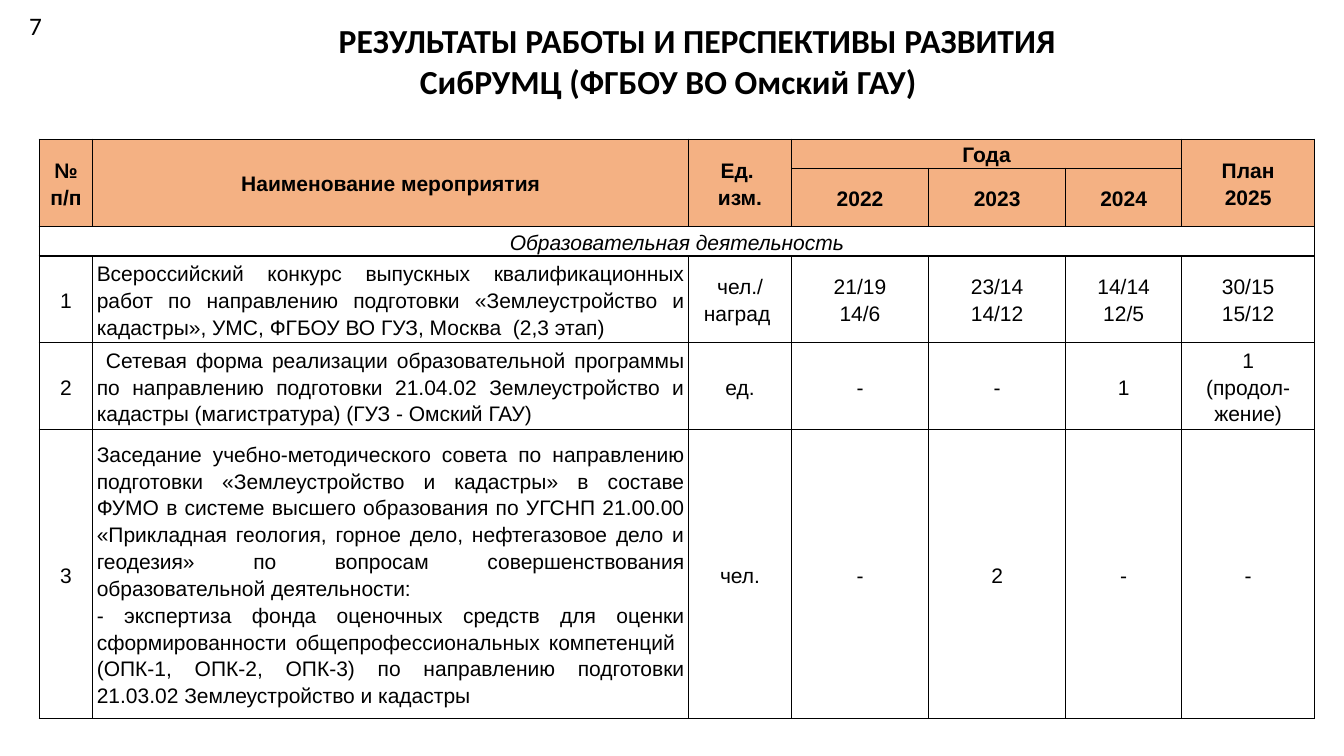
from dataclasses import dataclass
from typing import Any

import pptx
import pptx.dml.color
import pptx.enum.text
import pptx.oxml
import pptx.oxml.ns
import pptx.util
from pptx.util import Inches

ALIGN = pptx.enum.text.PP_ALIGN
ANCHOR = pptx.enum.text.MSO_ANCHOR
COLORS = {"text": "000000", "border": "000000", "header": "F4B183"}

TITLE_FONT = {"name": "Calibri", "size": pptx.util.Pt(24), "bold": True}
NUMBER_FONT = {"name": "Calibri", "size": pptx.util.Pt(18)}
CELL_FONT = {"name": "Arial", "size": pptx.util.Pt(15), "bold": False, "italic": False}
HEADER_FONT = CELL_FONT | {"bold": True}
SECTION_FONT = CELL_FONT | {"italic": True}
CELL_FORMAT = {
    "margin_left": Inches(0.04),
    "margin_right": Inches(0.04),
    "margin_top": 0,
    "margin_bottom": 0,
    "vertical_anchor": ANCHOR.MIDDLE,
}

COLUMN_WIDTHS = [0.53, 5.91, 1.02, 1.36, 1.36, 1.15, 1.32]
ROW_HEIGHTS = [0.29, 0.58, 0.29, 0.86, 0.86, 2.87]
NAME_COLUMN = 1
HEADER_ROWS = 2


@dataclass
class TableCell:
    row: int
    col: int
    text: str
    rows: int = 1
    cols: int = 1


HEADER = [
    TableCell(0, 0, "№\nп/п", rows=2),
    TableCell(0, 1, "Наименование мероприятия", rows=2),
    TableCell(0, 2, "Ед. \nизм.", rows=2),
    TableCell(0, 3, "Года", cols=3),
    TableCell(0, 6, "План\n2025", rows=2),
    TableCell(1, 3, "2022"),
    TableCell(1, 4, "2023"),
    TableCell(1, 5, "2024"),
]
SECTION = TableCell(2, 0, "Образовательная деятельность", cols=7)
ACTIVITIES = [
    [
        "1",
        "Всероссийский конкурс выпускных квалификационных работ по направлению "
        "подготовки «Землеустройство и кадастры», УМС, ФГБОУ ВО ГУЗ, Москва  (2,3 этап)",
        "чел./\nнаград ", "21/19\n14/6", "23/14\n14/12", "14/14\n12/5", "30/15\n15/12",
    ],
    [
        "2",
        " Сетевая форма реализации образовательной программы по направлению подготовки "
        "21.04.02 Землеустройство и кадастры (магистратура) (ГУЗ - Омский ГАУ)",
        "ед.", "-", "-", "1", "1\n(продол-жение)",
    ],
    [
        "3",
        "Заседание учебно-методического совета по направлению подготовки "
        "«Землеустройство и кадастры» в составе ФУМО в системе высшего образования "
        "по УГСНП 21.00.00 «Прикладная геология, горное дело, нефтегазовое дело и "
        "геодезия» по вопросам совершенствования образовательной деятельности:\n"
        "- экспертиза фонда оценочных средств для оценки сформированности "
        "общепрофессиональных компетенций \v(ОПК-1, ОПК-2, ОПК-3) по направлению "
        "подготовки 21.03.02 Землеустройство и кадастры",
        "чел.", "-", "2", "-", "-",
    ],
]


def apply_format(obj: Any, values: dict[str, Any]) -> None:
    for name, value in values.items():
        setattr(obj, name, value)


def rgb(name: str) -> pptx.dml.color.RGBColor:
    return pptx.dml.color.RGBColor.from_string(COLORS[name])


def write_text(tf: Any, text: str, font: dict[str, Any], paragraph: dict[str, Any]) -> None:
    """Newlines start paragraphs; vertical tabs break lines."""
    tf.text = text
    for p in tf.paragraphs:
        apply_format(p, paragraph)
        for r in p.runs:
            apply_format(r.font, font)
            r.font.color.rgb = rgb("text")


def add_borders(cell: Any) -> None:
    tc_pr = cell._tc.get_or_add_tcPr()
    for i, side in enumerate("LRTB"):
        tc_pr.insert(i, pptx.oxml.parse_xml(
            f'<a:ln{side} {pptx.oxml.ns.nsdecls("a")} w="12700"><a:solidFill>'
            f'<a:srgbClr val="{COLORS["border"]}"/></a:solidFill></a:ln{side}>'
        ))


def fill_cell(table: Any, item: TableCell, font: dict[str, Any]) -> None:
    cell = table.cell(item.row, item.col)
    if item.rows > 1 or item.cols > 1:
        cell.merge(table.cell(item.row + item.rows - 1, item.col + item.cols - 1))
    justified = item.col == NAME_COLUMN and item.row > HEADER_ROWS
    alignment = ALIGN.JUSTIFY if justified else ALIGN.CENTER
    write_text(cell.text_frame, item.text, font, {"alignment": alignment, "line_spacing": 1.15})


def add_results_table(slide: Any) -> None:
    table = slide.shapes.add_table(
        len(ROW_HEIGHTS), len(COLUMN_WIDTHS), Inches(0.39), Inches(1.38),
        Inches(sum(COLUMN_WIDTHS)), Inches(sum(ROW_HEIGHTS)),
    ).table
    apply_format(table, {"first_row": False, "horz_banding": False})
    for column, width in zip(table.columns, COLUMN_WIDTHS):
        column.width = Inches(width)
    for i, (row, height) in enumerate(zip(table.rows, ROW_HEIGHTS)):
        row.height = Inches(height)
        for cell in row.cells:
            apply_format(cell, CELL_FORMAT)
            if i < HEADER_ROWS:
                cell.fill.solid()
                cell.fill.fore_color.rgb = rgb("header")
            else:
                cell.fill.background()
            add_borders(cell)

    for item in HEADER:
        fill_cell(table, item, HEADER_FONT)
    fill_cell(table, SECTION, SECTION_FONT)
    for row, texts in enumerate(ACTIVITIES, SECTION.row + 1):
        for col, text in enumerate(texts):
            fill_cell(table, TableCell(row, col, text), CELL_FONT)


def add_title(slide: Any) -> None:
    sp = slide.shapes.title
    apply_format(sp, {"left": 0, "top": Inches(0.15),
                      "width": Inches(13.33), "height": Inches(0.91)})
    tf = sp.text_frame
    apply_format(tf, {"word_wrap": True, "vertical_anchor": ANCHOR.TOP,
                      "auto_size": pptx.enum.text.MSO_AUTO_SIZE.NONE})
    write_text(
        tf, "\tРЕЗУЛЬТАТЫ РАБОТЫ И ПЕРСПЕКТИВЫ РАЗВИТИЯ\nСибРУМЦ (ФГБОУ ВО Омский ГАУ) ",
        TITLE_FONT, {"alignment": ALIGN.CENTER},
    )
    for p in tf.paragraphs:
        p._p.get_or_add_pPr().append(pptx.oxml.parse_xml(
            f'<a:tabLst {pptx.oxml.ns.nsdecls("a")}><a:tab pos="0" algn="l"/></a:tabLst>'
        ))


def add_page_number(slide: Any) -> None:
    sp = slide.shapes.add_textbox(Inches(0.19), Inches(0.05), Inches(0.33), Inches(0.4))
    sp.text_frame.word_wrap = False
    write_text(sp.text_frame, "7", NUMBER_FONT, {"alignment": ALIGN.LEFT})


def main() -> None:
    prs = pptx.Presentation()
    apply_format(prs, {"slide_width": Inches(13.33), "slide_height": Inches(7.5)})
    slide = prs.slides.add_slide(prs.slide_layouts.get_by_name("Title Only"))
    add_title(slide)
    add_results_table(slide)
    add_page_number(slide)
    prs.save("out.pptx")


if __name__ == "__main__":
    main()
